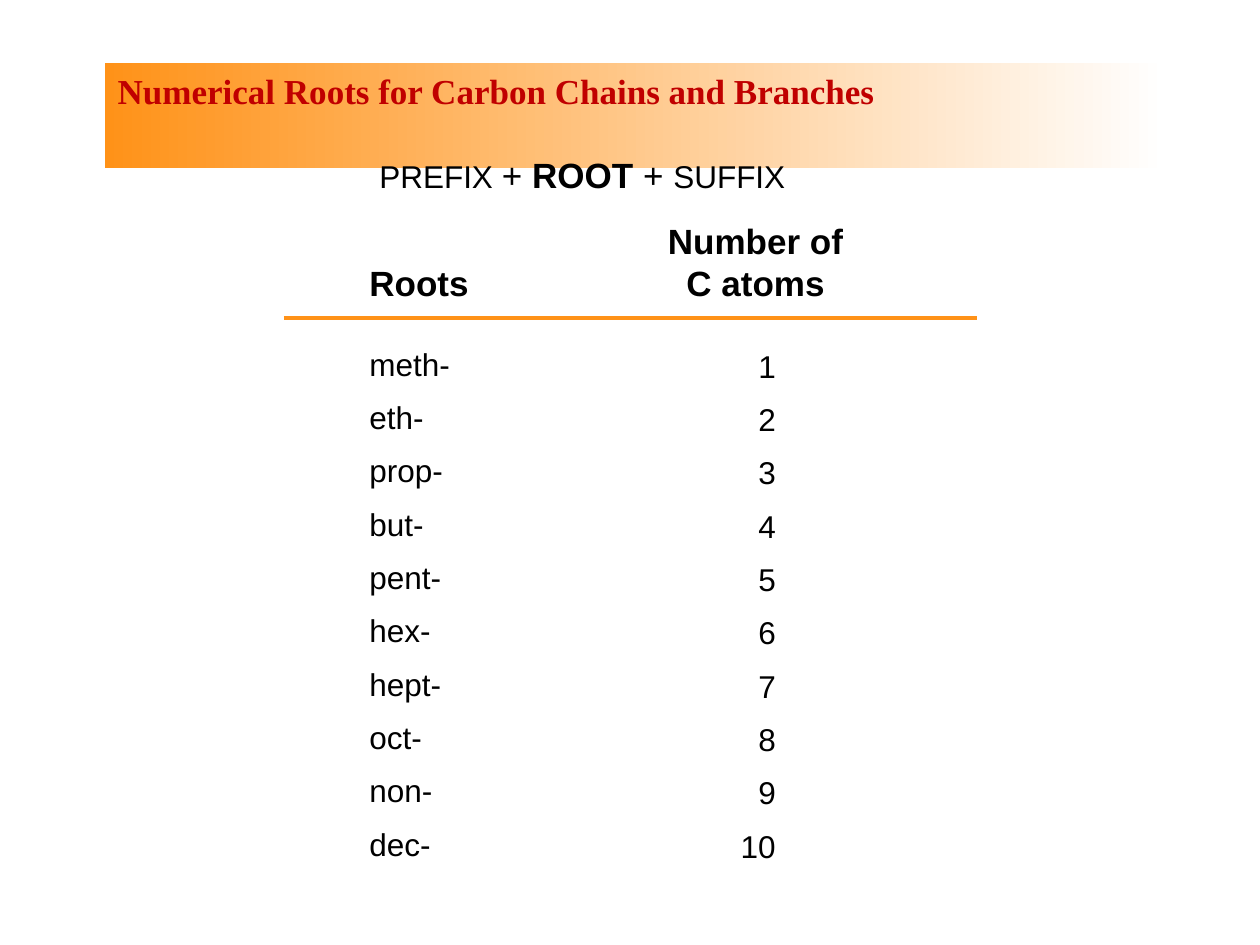
from dataclasses import dataclass

from lxml.etree import SubElement
from pptx import Presentation
from pptx.dml.color import RGBColor
from pptx.enum.shapes import MSO_CONNECTOR as Link
from pptx.enum.text import MSO_ANCHOR as Anchor, MSO_AUTO_SIZE as Fit, PP_ALIGN as Align
from pptx.oxml.ns import qn
from pptx.util import Emu, Pt

DPI = 126
ORANGE = RGBColor(0xFF, 0x92, 0x18)
WHITE = RGBColor(0xFF, 0xFF, 0xFF)
RED = RGBColor(0xC0, 0x00, 0x00)
BLACK = RGBColor(0x00, 0x00, 0x00)
ROOTS = ["meth-", "eth-", "prop-", "but-", "pent-", "hex-", "hept-", "oct-", "non-", "dec-"]


@dataclass(frozen=True)
class Term:
    text: str
    size: int = 18
    bold: bool = False
    color: RGBColor = BLACK
    font: str = "Arial"


@dataclass(frozen=True)
class Label:
    left: int
    top: int
    width: int
    height: int
    terms: tuple[Term, ...]
    align: Align = Align.LEFT
    wrap: bool = True


def px(value: int) -> Emu:
    return Emu(round(value * 914400 / DPI))


def write(shape, label: Label) -> None:
    shape.left, shape.top = px(label.left), px(label.top)
    shape.width, shape.height = px(label.width), px(label.height)
    frame = shape.text_frame
    frame.word_wrap = label.wrap
    frame.auto_size = Fit.SHAPE_TO_FIT_TEXT
    frame.vertical_anchor = Anchor.TOP
    para = frame.paragraphs[0]
    para.alignment = label.align
    for term in label.terms:
        run = para.add_run()
        run.text = term.text
        run.font.name = term.font
        run.font.size = Pt(term.size)
        run.font.bold = term.bold
        run.font.color.rgb = term.color


def draw(slide, label: Label) -> None:
    write(slide.shapes.add_textbox(0, 0, 0, 0), label)


def banner(slide) -> None:
    title = slide.shapes.title
    head = Term("Numerical Roots for Carbon Chains and Branches", 20, True, RED, "Times New Roman")
    write(title, Label(105, 63, 1061, 54, (head,)))
    title.fill.gradient()
    title.fill.gradient_angle = 0
    for stop, color, place in zip(title.fill.gradient_stops, (ORANGE, WHITE), (0, 1)):
        stop.color.rgb = color
        stop.position = place


def rule(slide) -> None:
    line = slide.shapes.add_connector(Link.STRAIGHT, px(284), px(318), px(977), px(318))
    line.line.color.rgb = ORANGE
    line.line.width = Pt(2.25)
    SubElement(line.element.spPr, qn("a:effectLst"))


def main() -> None:
    deck = Presentation()
    deck.slide_width, deck.slide_height = px(1260), px(945)
    slide = deck.slides.add_slide(deck.slide_layouts[5])
    banner(slide)
    draw(slide, Label(640, 213, 231, 97, (Term("Number of C atoms", 20, True),), Align.CENTER))
    draw(slide, Label(357, 255, 136, 54, (Term("Roots", 20, True),)))
    for row, root in enumerate(ROOTS):
        shift = row * 160 // 3
        count = str(row + 1)
        width = 21 * (len(count) + 1)
        draw(slide, Label(357, 339 + shift, 147, 50, (Term(root),)))
        draw(slide, Label(788 - width, 341 + shift, width, 50, (Term(count),), Align.RIGHT))
    rule(slide)
    terms = (Term("PREFIX "), Term("+ ", 20), Term("ROOT", 20, True), Term(" + ", 20), Term("SUFFIX"))
    draw(slide, Label(367, 147, 431, 54, terms, wrap=False))
    deck.save("out.pptx")


if __name__ == "__main__":
    main()
